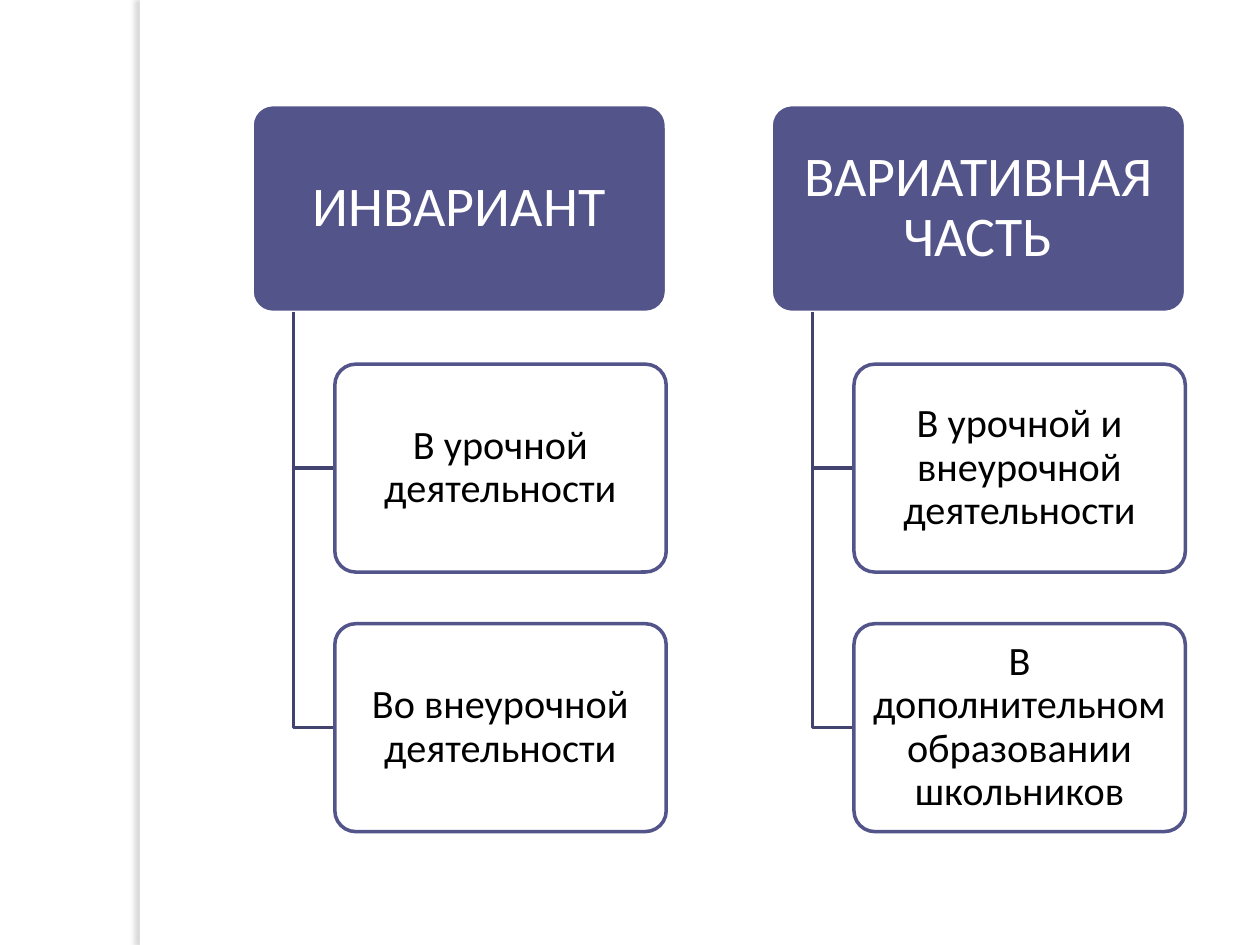
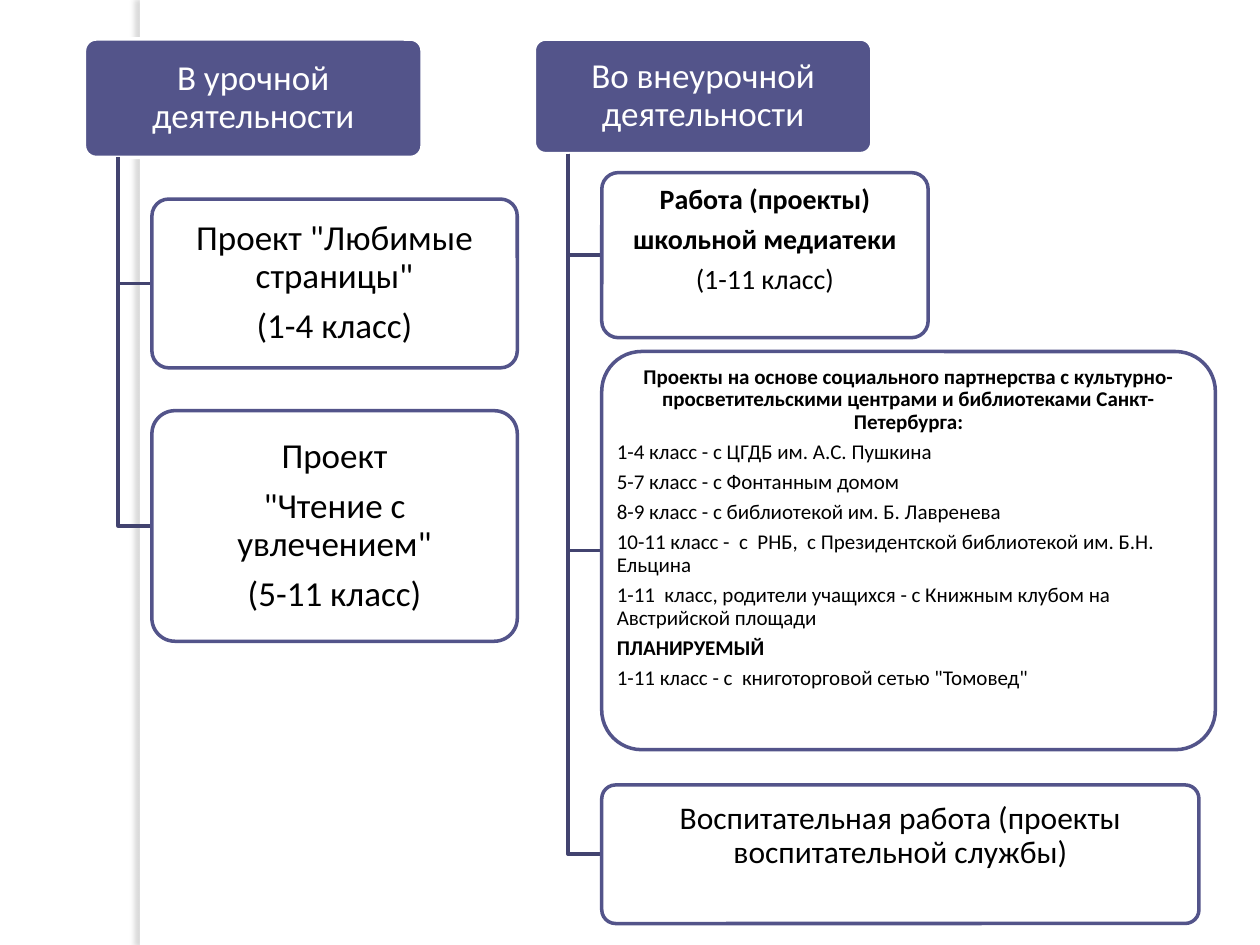
import pptx
import pptx.util
import pptx.dml.color
import pptx.enum.shapes
import pptx.enum.text
import pptx.oxml
import pptx.oxml.ns

Inches = pptx.util.Inches
Pt = pptx.util.Pt
ALIGN = pptx.enum.text.PP_ALIGN
SHAPE = pptx.enum.shapes.MSO_SHAPE

VIOLET = "53548A"
DARK_VIOLET = "42436F"
WHITE = "FFFFFF"
BLACK = "000000"
GREY = "6E6E6E"

FONT = "Calibri"
LINE_WIDTH = 2
STEM_SHARE = 0.1
INDENT_SHARE = 0.2

BOLD = {"bold": True}
LEFT = {"alignment": ALIGN.LEFT}
HEADER = {"fill": VIOLET, "line": WHITE, "color": WHITE}
CHILD = {"fill": WHITE, "line": VIOLET, "color": BLACK}


def rgb(value):
    return pptx.dml.color.RGBColor.from_string(value)


def set_values(obj, values):
    for name, value in values.items():
        setattr(obj, name, value)


def set_line(sp, color):
    sp.line.color.rgb = rgb(color)
    sp.line.width = Pt(LINE_WIDTH)


def add_band(slide):
    sp = slide.shapes.add_shape(
        SHAPE.RECTANGLE, Inches(1.11), 0, Inches(0.08), Inches(7.5))
    sp.fill.solid()
    sp.fill.fore_color.rgb = rgb(WHITE)
    sp.line.fill.background()
    sp._element.spPr.append(pptx.oxml.parse_xml(
        f'<a:effectLst {pptx.oxml.ns.nsdecls("a")}>'
        f'<a:outerShdw blurRad="{Pt(3)}" dist="{Pt(3)}" dir="10800000" rotWithShape="0">'
        f'<a:srgbClr val="{GREY}"><a:alpha val="25000"/></a:srgbClr>'
        '</a:outerShdw></a:effectLst>'))


def add_paragraph(p, text, size, color, bold=False, alignment=ALIGN.CENTER):
    set_values(p, {"alignment": alignment, "line_spacing": 0.9,
                   "space_after": Pt(0.35 * size)})
    r = p.add_run()
    r.text = text
    set_values(r.font, {"name": FONT, "size": Pt(size), "bold": bold})
    r.font.color.rgb = rgb(color)


def add_box(slide, x, y, w, h, size, paragraphs, style, space_below=0):
    sp = slide.shapes.add_shape(
        SHAPE.ROUNDED_RECTANGLE, Inches(x), Inches(y), Inches(w), Inches(h))
    sp.adjustments[0] = 0.1
    sp.shadow.inherit = False
    sp.fill.solid()
    sp.fill.fore_color.rgb = rgb(style["fill"])
    set_line(sp, style["line"])
    tf = sp.text_frame
    side, end = Inches(size / 450), Inches(size / 675)
    set_values(tf, {
        "word_wrap": True,
        "vertical_anchor": pptx.enum.text.MSO_ANCHOR.MIDDLE,
        "margin_left": side,
        "margin_right": side,
        "margin_top": end,
        "margin_bottom": end + Inches(space_below),
    })
    for i, (text, values) in enumerate(paragraphs):
        p = tf.add_paragraph() if i else tf.paragraphs[0]
        add_paragraph(p, text, size, style["color"], **values)


def add_elbow(slide, x, top, end_x, end_y):
    fb = slide.shapes.build_freeform(Inches(x), Inches(top))
    fb.add_line_segments(
        [(Inches(x), Inches(end_y)), (Inches(end_x), Inches(end_y))], close=False)
    sp = fb.convert_to_shape()
    sp.shadow.inherit = False
    sp.fill.background()
    set_line(sp, DARK_VIOLET)


def add_branch(slide, x, y, w, h, size, title, children):
    add_box(slide, x, y, w, h, size, [(title, {})], HEADER)
    stem_x, child_x = x + STEM_SHARE * w, x + INDENT_SHARE * w
    for child in children:
        add_elbow(slide, stem_x, y + h, child_x, child["y"] + child["h"] / 2)
        add_box(slide, child_x, style=CHILD, **child)


def add_parts_slide(slide):
    parts = [
        ("ИНВАРИАНТ", ["В урочной деятельности", "Во внеурочной деятельности"]),
        ("ВАРИАТИВНАЯ ЧАСТЬ", ["В урочной и внеурочной деятельности",
                               "В дополнительном образовании школьников"]),
    ]
    top, height, row_step, column_step = 0.83, 1.65, 2.06, 4.12
    for column, (title, texts) in enumerate(parts):
        children = [
            {"y": top + row * row_step, "w": 2.63, "h": height, "size": 23,
             "paragraphs": [(text, {})]}
            for row, text in enumerate(texts, 1)]
        add_branch(slide, 2 + column * column_step, top, 3.29, height, 32,
                   title, children)


def add_projects_slide(slide):
    lessons = [
        {"y": 1.58, "w": 2.9, "h": 1.34, "size": 20, "paragraphs": [
            ('Проект "Любимые страницы"', {}),
            ("(1-4 класс)", {})]},
        {"y": 3.26, "w": 2.9, "h": 1.83, "size": 20, "paragraphs": [
            ("Проект", {}),
            ('"Чтение с увлечением"', {}),
            ("(5-11 класс)", {})]},
    ]
    after_lessons = [
        {"y": 1.37, "w": 2.59, "h": 1.31, "size": 16, "space_below": 0.24,
         "paragraphs": [
             ("Работа (проекты)", BOLD),
             ("школьной медиатеки", BOLD),
             ("(1-11 класс)", {})]},
        {"y": 2.79, "w": 4.87, "h": 3.16, "size": 12, "space_below": 0.36,
         "paragraphs": [
             ("Проекты на основе социального партнерства с "
              "культурно-просветительскими центрами и библиотеками "
              "Санкт-Петербурга:", BOLD),
             ("1-4 класс - с ЦГДБ им. А.С. Пушкина", LEFT),
             ("5-7 класс - с Фонтанным домом", LEFT),
             ("8-9 класс - с библиотекой им. Б. Лавренева", LEFT),
             ("10-11 класс -  с  РНБ,  с Президентской библиотекой "
              "им. Б.Н. Ельцина", LEFT),
             ("1-11  класс, родители учащихся - с Книжным клубом на "
              "Австрийской площади", LEFT),
             ("ПЛАНИРУЕМЫЙ", {**LEFT, **BOLD}),
             ('1-11 класс - с  книготорговой сетью "Томовед"', LEFT)]},
        {"y": 6.23, "w": 4.74, "h": 1.1, "size": 18, "space_below": 0.28,
         "paragraphs": [
             ("Воспитательная работа (проекты воспитательной службы)", {})]},
    ]
    add_branch(slide, 0.67, 0.31, 2.68, 0.94, 20, "В урочной деятельности", lessons)
    add_branch(slide, 4.24, 0.31, 2.68, 0.91, 20, "Во внеурочной деятельности",
               after_lessons)


def main():
    prs = pptx.Presentation()
    set_values(prs, {"slide_width": Inches(10), "slide_height": Inches(7.5)})
    for add_content in (add_parts_slide, add_projects_slide):
        slide = prs.slides.add_slide(prs.slide_layouts[6])
        add_band(slide)
        add_content(slide)
    prs.save("out.pptx")


if __name__ == "__main__":
    main()
